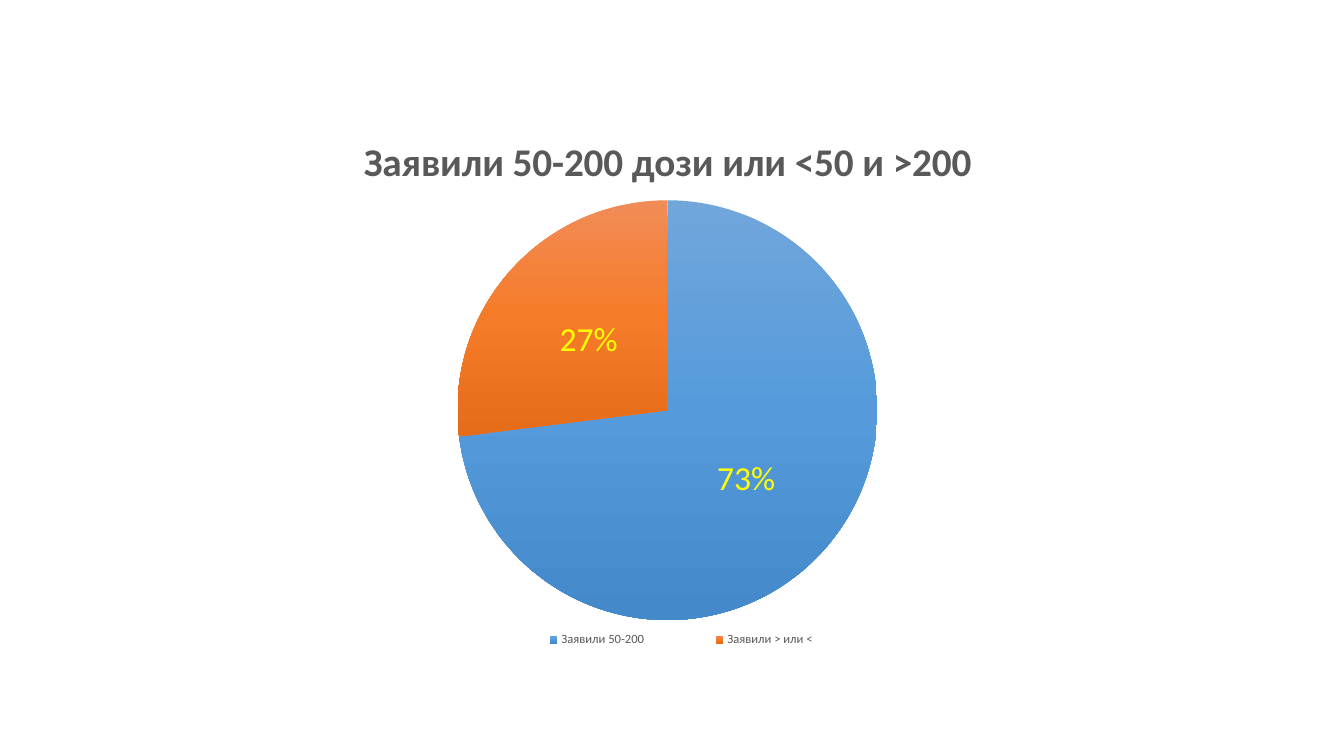
from lxml.etree import SubElement
from copy import deepcopy
from pptx import Presentation
from pptx.chart.data import CategoryChartData as Data
from pptx.dml.color import RGBColor as RGB
from pptx.enum.chart import XL_CHART_TYPE as Kind, XL_LABEL_POSITION as Spot, XL_LEGEND_POSITION as Side
from pptx.oxml.ns import qn
from pptx.util import Cm, Pt


def write(item, text=None, size=10, color="595959", bold=False):
    if text:
        item.text_frame.text = text
        font = item.text_frame.paragraphs[0].runs[0].font
    else:
        font = item.font
    font.name = "Calibri"
    font.size = Pt(size)
    font.bold = bold
    font.color.rgb = RGB.from_string(color)


def place(node, index, **spots):
    for old in node.findall(qn("c:layout")):
        node.remove(old)
    frame = node.makeelement(qn("c:layout"))
    node.insert(index, frame)
    box = SubElement(frame, qn("c:manualLayout"))
    if node.tag == qn("c:plotArea"):
        SubElement(box, qn("c:layoutTarget")).set("val", "inner")
    for key in "xy":
        SubElement(box, qn(f"c:{key}Mode")).set("val", "edge")
    for key, value in spots.items():
        SubElement(box, qn(f"c:{key}")).set("val", str(value))


deck = Presentation()
deck.slide_width, deck.slide_height = Cm(33.87), Cm(19.05)
slide = deck.slides.add_slide(deck.slide_layouts[6])

data = Data(number_format="0")
data.categories = ["Заявили 50-200", "Заявили > или <"]
data.add_series("Series 1", [73, 27])
chart = slide.shapes.add_chart(
    Kind.PIE, Cm(5.16), Cm(2.82), Cm(23.32), Cm(13.92), data).chart
write(chart, color="000000")

chart.has_title = True
title = chart.chart_title
write(title, "Заявили 50-200 дози или <50 и >200", size=28, bold=True)
title.include_in_layout = False

chart.has_legend = True
legend = chart.legend
legend.position = Side.BOTTOM
legend.include_in_layout = False
write(legend, size=9)
place(legend._element, 1, x=0.3, y=0.93, w=0.43, h=0.05)

plot = chart.plots[0]
plot.vary_by_categories = True
place(chart._chartSpace.chart.plotArea, 0, x=0.27, y=0.16, w=0.46, h=0.76)

plot.has_data_labels = True
labels = plot.data_labels
labels.show_percentage = True
labels.show_value = False
labels.number_format = "0%"
labels.number_format_is_linked = False
labels.position = Spot.CENTER
write(labels, size=24, color="FFFF00")

shades = [("71A6DB", "559BDB", "448ACA"), ("F18C57", "F67B28", "E56C19")]
for index, tones in enumerate(shades):
    form = plot.series[0].points[index].format
    form.line.fill.background()
    fill = form.fill
    fill.gradient()
    fill.gradient_angle = 270
    stops = list(chart._chartSpace.iter(qn("a:gsLst")))[index]
    stops.insert(1, deepcopy(stops[0]))
    for step, (stop, tone) in enumerate(zip(fill.gradient_stops, tones)):
        stop.position = step / 2
        stop.color.rgb = RGB.from_string(tone)

deck.save("out.pptx")
